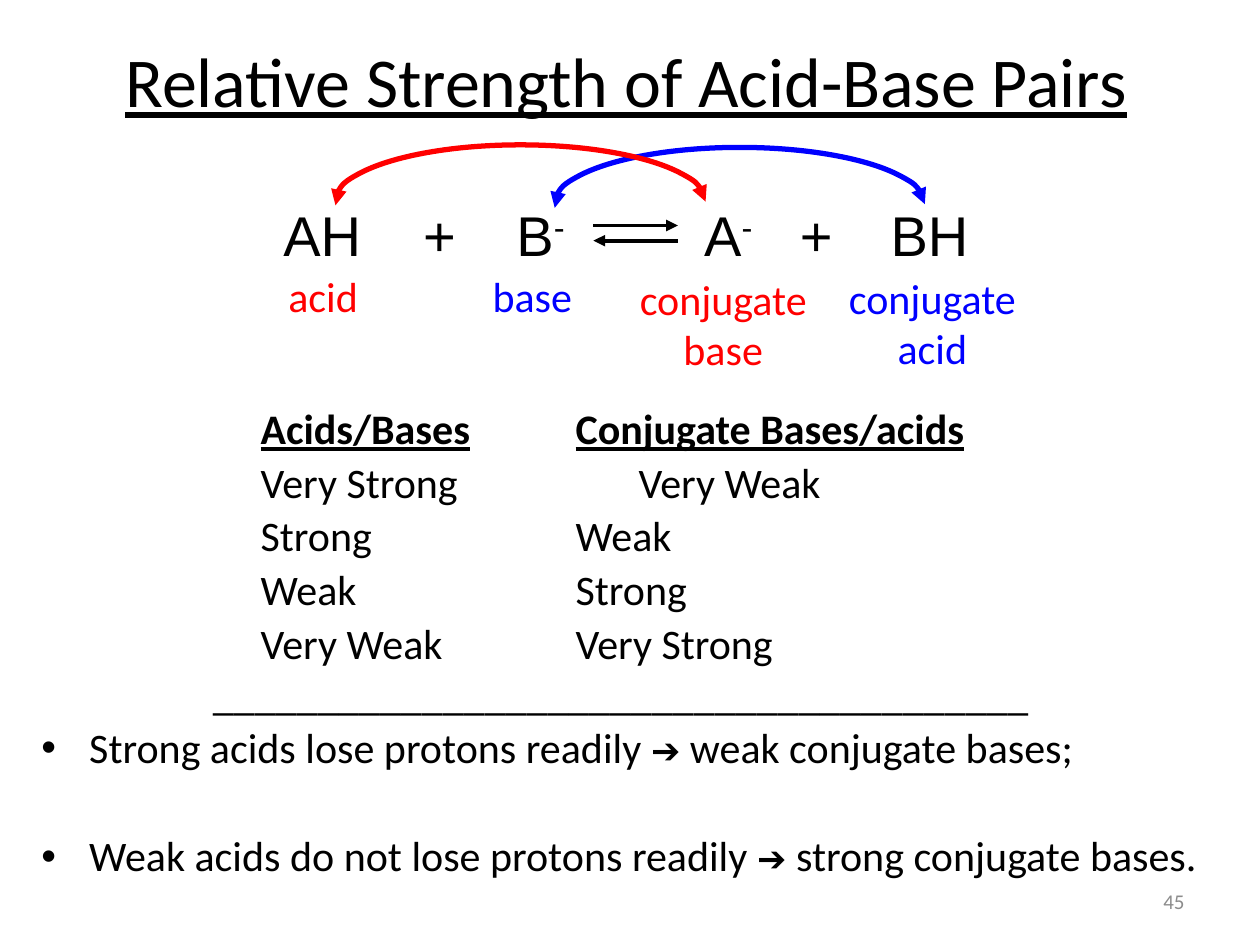
from dataclasses import dataclass

from lxml import etree
from pptx import Presentation
from pptx.dml.color import RGBColor
from pptx.enum import shapes, text
from pptx.oxml import ns
from pptx.util import Inches, Pt

COLORS = {"black": "000000", "red": "FF0000", "blue": "0000FF", "gray": "8C8C8C"}
ALIGN = text.PP_ALIGN


@dataclass
class Label:
    words: str
    left: float
    top: float
    width: float
    height: float
    color: str
    size: int = 24
    align: ALIGN = ALIGN.CENTER


@dataclass
class Arc:
    left: float
    top: float
    color: str


@dataclass
class Arrow:
    start: float
    end: float
    y: float


LABELS = [
    Label("acid", 1.92, 2.1, 1.29, 0.5, "red"),
    Label("conjugate base", 4.94, 2.12, 1.6, 0.91, "red"),
    Label("conjugate acid", 6.6, 2.11, 1.6, 0.91, "blue"),
    Label("base", 3.58, 2.1, 1.29, 0.5, "blue"),
    Label("45", 7.17, 7.0, 2.33, 0.3, "gray", 12, ALIGN.RIGHT),
]
ARCS = [Arc(4.4, 1.17, "blue"), Arc(2.66, 1.15, "red")]
ARROWS = [Arrow(4.71, 5.38, 1.79), Arrow(5.38, 4.71, 1.91)]
EQUATION = [("AH\t+\tB", False), ("-", True), ("\tA", False), ("-", True),
            ("\t+\tBH", False)]
EQUATION_TABS = [1.11, 1.85, 3.34, 4.1, 4.82]
STRENGTHS = [
    "Very Strong\t\t\tVery Weak",
    "Strong\t\t\t\tWeak",
    "Weak\t\t\t\tStrong",
    "Very Weak\t\t\tVery Strong",
]
CONCLUSIONS = [
    ("Strong acids lose protons readily ", " weak conjugate bases;", 4.8),
    ("Weak acids do not lose protons readily ", " strong conjugate bases.", 36),
]


def color_of(name: str) -> RGBColor:
    return RGBColor.from_string(COLORS[name])


def add_run(paragraph, words: str, size: float = 24, color: str = "black",
            name: str = "Calibri", **formats):
    run = paragraph.add_run()
    run.text = words
    values = {"size": Pt(size), "name": name, **formats}
    for attribute, value in values.items():
        setattr(run.font, attribute, value)
    run.font.color.rgb = color_of(color)
    return run


def add_box(slide, left: float, top: float, width: float, height: float):
    box = slide.shapes.add_textbox(*map(Inches, (left, top, width, height)))
    box.text_frame.word_wrap = True
    return box.text_frame


def add_label(slide, label: Label) -> None:
    frame = add_box(slide, label.left, label.top, label.width, label.height)
    paragraph = frame.paragraphs[0]
    paragraph.alignment = label.align
    add_run(paragraph, label.words, label.size, label.color)


def style_line(shape, color: str, width: float, ends: tuple) -> None:
    shape.line.color.rgb = color_of(color)
    shape.line.width = Pt(width)
    outline = shape.line._get_or_add_ln()
    for end in ends:
        etree.SubElement(outline, ns.qn(f"a:{end}"), type="triangle")


def add_arrow(slide, arrow: Arrow) -> None:
    connector = slide.shapes.add_connector(
        shapes.MSO_CONNECTOR.STRAIGHT, Inches(arrow.start), Inches(arrow.y),
        Inches(arrow.end), Inches(arrow.y))
    style_line(connector, "black", 2.25, ("tailEnd",))
    etree.SubElement(connector._element.spPr, ns.qn("a:effectLst"))


def add_arc(slide, arc: Arc) -> None:
    shape = slide.shapes.add_shape(
        shapes.MSO_SHAPE.ARC, Inches(arc.left), Inches(arc.top),
        Inches(2.94), Inches(0.9))
    shape.adjustments[0] = 107.295
    shape.adjustments[1] = 0
    shape.fill.background()
    style_line(shape, arc.color, 3, ("headEnd", "tailEnd"))
    shape.shadow.inherit = False


def add_equation(slide) -> None:
    paragraph = add_box(slide, 2.15, 1.54, 5.9, 0.64).paragraphs[0]
    properties = paragraph._p.get_or_add_pPr()
    tabs = etree.SubElement(properties, ns.qn("a:tabLst"))
    for position in EQUATION_TABS:
        etree.SubElement(tabs, ns.qn("a:tab"), pos=str(Inches(position)), algn="l")
    for words, raised in EQUATION:
        run = add_run(paragraph, words, 32, name="Arial")
        if raised:
            run._r.get_or_add_rPr().set("baseline", "30000")


def add_paragraph(frame, margin: float, indent: float = 0, before: float = 4.8,
                  spacing: float = 0.9, bullet: bool = False):
    first = frame.paragraphs[0]
    paragraph = frame.add_paragraph() if first.runs else first
    properties = paragraph._p.get_or_add_pPr()
    properties.set("marL", str(Inches(margin)))
    properties.set("indent", str(Inches(indent)))
    if bullet:
        etree.SubElement(properties, ns.qn("a:buFont"), typeface="Arial")
        etree.SubElement(properties, ns.qn("a:buChar"), char="•")
    paragraph.line_spacing = spacing
    paragraph.space_before = Pt(before)
    return paragraph


def add_body(slide) -> None:
    frame = add_box(slide, 0.23, 3.19, 10.25, 4.09)

    # Strength comparison, on the default one-inch tabs
    heading = add_paragraph(frame, 1.74, before=0)
    add_run(heading, "Acids/Bases\t\tConjugate Bases/acids", bold=True, underline=True)
    for row in STRENGTHS:
        add_run(add_paragraph(frame, 1.74), row)
    add_run(add_paragraph(frame, 1.74, -0.38, before=0, spacing=1.0), "_" * 39)

    # Conclusions
    for cause, effect, before in CONCLUSIONS:
        paragraph = add_paragraph(frame, 0.38, -0.38, before, bullet=True)
        add_run(paragraph, cause)
        add_run(paragraph, "➔", 20)
        add_run(paragraph, effect)


def add_title(slide) -> None:
    title = slide.shapes.title
    place = {"left": 0.65, "top": 0.01, "width": 8.64, "height": 1.25}
    for attribute, value in place.items():
        setattr(title, attribute, Inches(value))
    frame = title.text_frame
    frame.auto_size = text.MSO_AUTO_SIZE.NONE
    frame.vertical_anchor = text.MSO_ANCHOR.MIDDLE
    frame.paragraphs[0].alignment = ALIGN.CENTER
    add_run(frame.paragraphs[0], "Relative Strength of Acid-Base Pairs", 40,
            underline=True)


def main() -> None:
    presentation = Presentation()
    presentation.slide_width, presentation.slide_height = Inches(10), Inches(7.5)
    slide = presentation.slides.add_slide(presentation.slide_layouts[5])

    add_body(slide)
    add_title(slide)

    # Reaction with its equilibrium arrows
    add_equation(slide)
    for arrow in ARROWS:
        add_arrow(slide, arrow)

    # Conjugate pairs
    for label in LABELS:
        add_label(slide, label)
    for arc in ARCS:
        add_arc(slide, arc)

    presentation.save("out.pptx")


if __name__ == "__main__":
    main()
